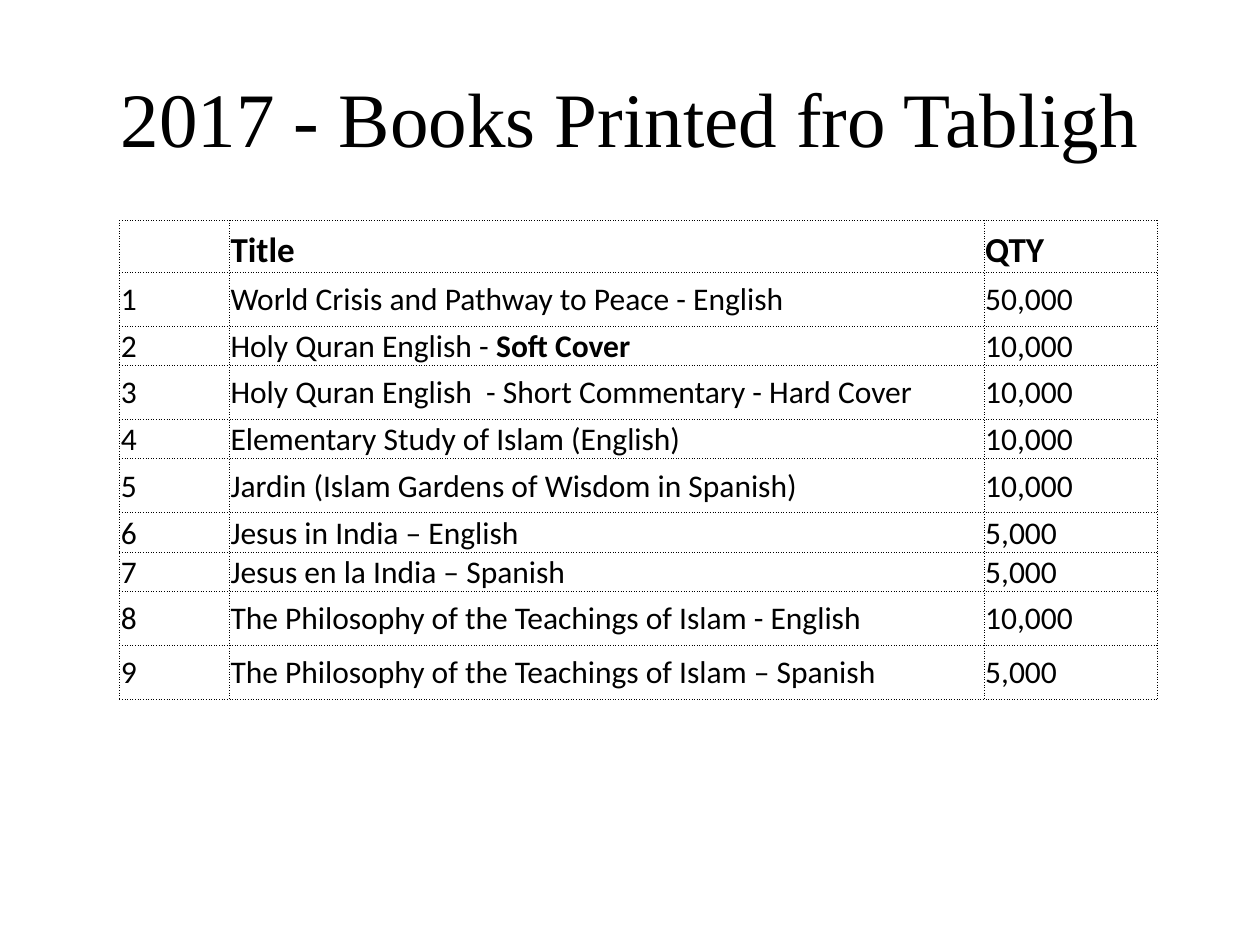
from dataclasses import dataclass

from lxml.etree import SubElement
from pptx import Presentation
from pptx.dml.color import RGBColor
from pptx.enum.text import MSO_ANCHOR, PP_ALIGN
from pptx.oxml.ns import qn
from pptx.util import Inches, Pt


@dataclass(frozen=True)
class Theme:
    ink: str = "000000"
    paper: str = "FFFFFF"
    title_font: str = "Times New Roman"
    table_font: str = "Calibri"
    title_size: int = 44
    header_size: int = 20
    body_size: int = 18
    border_width: float = 0.5


TALL, SHORT = 0.43, 0.22
HEADER_HEIGHT = 0.41
COLUMN_WIDTHS = (0.87, 5.99, 1.38)

# title, bold ending, quantity, row height
BOOKS = [
    ("World Crisis and Pathway to Peace - English", "", 50000, TALL),
    ("Holy Quran English -", " Soft Cover", 10000, SHORT),
    ("Holy Quran English  - Short Commentary - Hard Cover", "", 10000, TALL),
    ("Elementary Study of Islam (English)", "", 10000, SHORT),
    ("Jardin (Islam Gardens of Wisdom in Spanish)", "", 10000, TALL),
    ("Jesus in India – English", "", 5000, SHORT),
    ("Jesus en la India – Spanish", "", 5000, SHORT),
    ("The Philosophy of the Teachings of Islam - English", "", 10000, TALL),
    ("The Philosophy of the Teachings of Islam – Spanish", "", 5000, TALL),
]


class SlideBuilder:
    def __init__(self, slide, theme):
        self.slide = slide
        self.theme = theme

    def style_run(self, run, font, size, bold=False):
        run.font.name = font
        run.font.size = Pt(size)
        run.font.bold = bold
        run.font.color.rgb = RGBColor.from_string(self.theme.ink)

    def title(self, text, left, top, width, height):
        box = self.slide.shapes.add_textbox(
            Inches(left), Inches(top), Inches(width), Inches(height))
        frame = box.text_frame
        frame.word_wrap = True
        frame.vertical_anchor = MSO_ANCHOR.MIDDLE
        frame.text = text
        heading = frame.paragraphs[0]
        heading.alignment = PP_ALIGN.CENTER
        self.style_run(heading.runs[0], self.theme.title_font, self.theme.title_size)

    def table(self, left, top, column_widths, row_heights):
        table = self.slide.shapes.add_table(
            len(row_heights), len(column_widths), Inches(left), Inches(top),
            Inches(sum(column_widths)), Inches(sum(row_heights))).table
        table.first_row = table.horz_banding = False
        for column, width in zip(table.columns, column_widths):
            column.width = Inches(width)
        for row, height in zip(table.rows, row_heights):
            row.height = Inches(height)
        for cell in table.iter_cells():
            cell.fill.background()
            self.dotted_border(cell)
        return table

    def dotted_border(self, cell):
        """Draw all four sides; the schema wants them ahead of the fill."""
        properties = cell._tc.get_or_add_tcPr()
        for position, side in enumerate(("a:lnL", "a:lnR", "a:lnT", "a:lnB")):
            line = SubElement(properties, qn(side), w=str(Pt(self.theme.border_width)))
            fill = SubElement(line, qn("a:solidFill"))
            SubElement(fill, qn("a:srgbClr"), val=self.theme.ink)
            SubElement(line, qn("a:prstDash"), val="dot")
            properties.insert(position, line)

    def cell_text(self, cell, text, size, anchor, bold=False, bold_ending=""):
        cell.margin_left = cell.margin_right = cell.margin_top = Inches(0.01)
        cell.margin_bottom = 0
        cell.vertical_anchor = anchor
        cell.text_frame.text = text
        paragraph = cell.text_frame.paragraphs[0]
        self.style_run(paragraph.runs[0], self.theme.table_font, size, bold)
        if bold_ending:
            ending = paragraph.add_run()
            ending.text = bold_ending
            self.style_run(ending, self.theme.table_font, size, True)

    def book_table(self, left, top, books):
        heights = [HEADER_HEIGHT] + [height for *_, height in books]
        table = self.table(left, top, COLUMN_WIDTHS, heights)
        for column, label in enumerate(("", "Title", "QTY")):
            header = table.cell(0, column)
            header.fill.solid()
            header.fill.fore_color.rgb = RGBColor.from_string(self.theme.paper)
            if label:
                self.cell_text(header, label, self.theme.header_size,
                               MSO_ANCHOR.BOTTOM, bold=True)
        for number, (name, ending, quantity, _) in enumerate(books, start=1):
            entries = ((str(number), ""), (name, ending), (f"{quantity:,}", ""))
            for column, (text, bold_ending) in enumerate(entries):
                self.cell_text(table.cell(number, column), text, self.theme.body_size,
                               MSO_ANCHOR.MIDDLE, bold_ending=bold_ending)


def main():
    presentation = Presentation()
    presentation.slide_width = Inches(10)
    presentation.slide_height = Inches(7.5)
    slide = presentation.slides.add_slide(presentation.slide_layouts[6])
    builder = SlideBuilder(slide, Theme())
    builder.title("2017 - Books Printed fro Tabligh", 0.5, 0.3, 9, 1.25)
    builder.book_table(0.95, 1.75, BOOKS)
    presentation.save("out.pptx")


if __name__ == "__main__":
    main()
